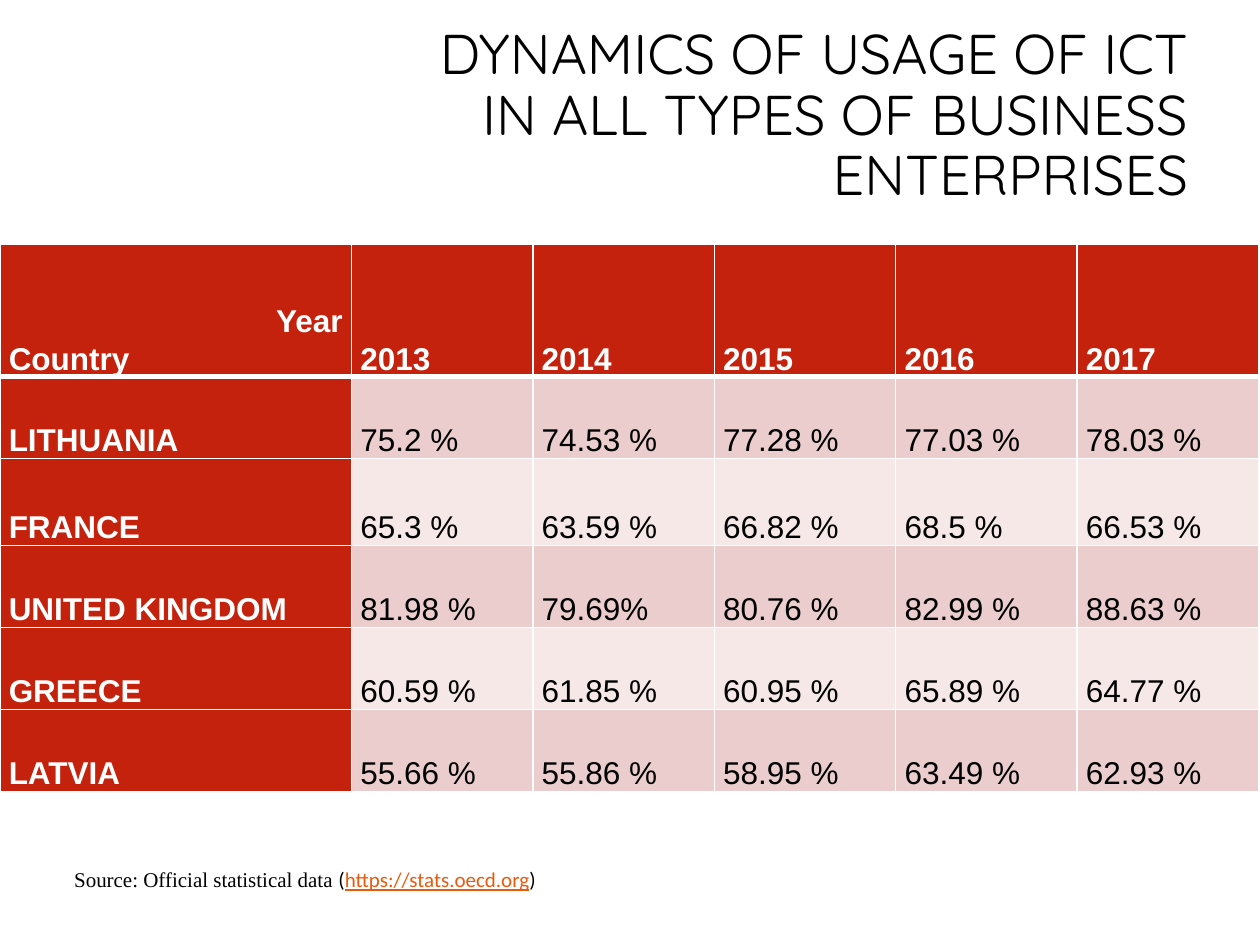
import pptx
import pptx.dml.color
import pptx.enum.text
import pptx.oxml
import pptx.oxml.ns
import pptx.util
from pptx.util import Inches

COLORS = {
    "red": "C4220D",
    "band_dark": "EACDCC",
    "band_light": "F5E8E7",
    "white": "FFFFFF",
    "black": "000000",
    "link": "EA5A0C",
}
ALIGN = pptx.enum.text.PP_ALIGN
ANCHOR = pptx.enum.text.MSO_ANCHOR

YEARS = ["2013", "2014", "2015", "2016", "2017"]
COUNTRIES = [
    ("LITHUANIA", ["75.2 %", "74.53 %", "77.28 %", "77.03 %", "78.03 %"]),
    ("FRANCE", ["65.3 %", "63.59 %", "66.82 %", "68.5 %", "66.53 %"]),
    ("UNITED KINGDOM", ["81.98 %", "79.69%", "80.76 %", "82.99 %", "88.63 %"]),
    ("GREECE", ["60.59 %", "61.85 %", "60.95 %", "65.89 %", "64.77 %"]),
    ("LATVIA", ["55.66 %", "55.86 %", "58.95 %", "63.49 %", "62.93 %"]),
]
COLUMN_WIDTHS = [2.79] + [1.44] * len(YEARS)
ROW_HEIGHTS = [1.05, 0.65, 0.69, 0.65, 0.65, 0.65]


def rgb(name):
    return pptx.dml.color.RGBColor.from_string(COLORS[name])


def add_run(p, text, font, size, color="black", bold=False, underline=False):
    r = p.add_run()
    r.text = text
    r.font.name = font
    r.font.size = pptx.util.Pt(size)
    r.font.color.rgb = rgb(color)
    r.font.bold = bold
    r.font.underline = underline


def add_text_box(s, left, top, width, height, anchor, align):
    """Add a wrapping text box and return its first paragraph."""
    sp = s.shapes.add_textbox(Inches(left), Inches(top), Inches(width), Inches(height))
    tf = sp.text_frame
    tf.word_wrap = True
    tf.vertical_anchor = anchor
    p = tf.paragraphs[0]
    p.alignment = align
    return p


def set_borders(cell, bottom):
    """Draw white cell borders, 1 pt except for the given bottom width."""
    tc_pr = cell._tc.get_or_add_tcPr()
    for side, points in (("L", 1), ("R", 1), ("T", 1), ("B", bottom)):
        tc_pr.append(pptx.oxml.parse_xml(
            f'<a:ln{side} {pptx.oxml.ns.nsdecls("a")} w="{pptx.util.Pt(points)}">'
            f'<a:solidFill><a:srgbClr val="{COLORS["white"]}"/></a:solidFill>'
            f'</a:ln{side}>'))


def fill_cell(cell, lines, fill, color, bold, bottom=1):
    """Style a cell and write its (text, alignment) lines."""
    set_borders(cell, bottom)
    cell.fill.solid()
    cell.fill.fore_color.rgb = rgb(fill)
    cell.vertical_anchor = ANCHOR.BOTTOM
    cell.margin_left = cell.margin_right = Inches(0.07)
    cell.margin_top = cell.margin_bottom = 0
    tf = cell.text_frame
    for i, (text, align) in enumerate(lines):
        p = tf.add_paragraph() if i else tf.paragraphs[0]
        p.alignment = align
        p.line_spacing = 1.07
        add_run(p, text, "Arial", 18, color, bold)


def add_usage_table(s):
    table = s.shapes.add_table(
        len(ROW_HEIGHTS), len(COLUMN_WIDTHS), 0, Inches(1.94),
        Inches(10), Inches(sum(ROW_HEIGHTS))).table
    for column, width in zip(table.columns, COLUMN_WIDTHS):
        column.width = Inches(width)
    for row, height in zip(table.rows, ROW_HEIGHTS):
        row.height = Inches(height)

    corner = [("Year", ALIGN.RIGHT), ("Country", ALIGN.LEFT)]
    headers = [corner] + [[(year, ALIGN.LEFT)] for year in YEARS]
    for j, lines in enumerate(headers):
        fill_cell(table.cell(0, j), lines, "red", "white", True, bottom=3)

    for i, (country, shares) in enumerate(COUNTRIES, 1):
        fill_cell(table.cell(i, 0), [(country, ALIGN.LEFT)], "red", "white", True)
        band = "band_dark" if i % 2 else "band_light"
        for j, share in enumerate(shares, 1):
            fill_cell(table.cell(i, j), [(share, ALIGN.LEFT)], band, "black", False)


def add_title(s):
    p = add_text_box(s, 2.92, 0.11, 6.61, 1.64, ANCHOR.MIDDLE, ALIGN.RIGHT)
    p.line_spacing = 0.9
    add_run(p, "DYNAMICS OF USAGE OF ICT IN ALL TYPES OF BUSINESS ENTERPRISES",
            "Quicksand", 32)


def add_source(s):
    p = add_text_box(s, 0.49, 6.36, 8.9, 0.77, ANCHOR.BOTTOM, ALIGN.JUSTIFY)
    add_run(p, "Source: Official statistical data ", "Times New Roman", 12)
    add_run(p, "(", "Calibri", 12)
    add_run(p, "https://stats.oecd.org", "Calibri", 12, "link", underline=True)
    add_run(p, ")", "Calibri", 12)


def main():
    prs = pptx.Presentation()
    prs.slide_width, prs.slide_height = Inches(10), Inches(7.5)
    s = prs.slides.add_slide(prs.slide_layouts[6])
    add_title(s)
    add_usage_table(s)
    add_source(s)
    prs.save("out.pptx")


if __name__ == "__main__":
    main()
